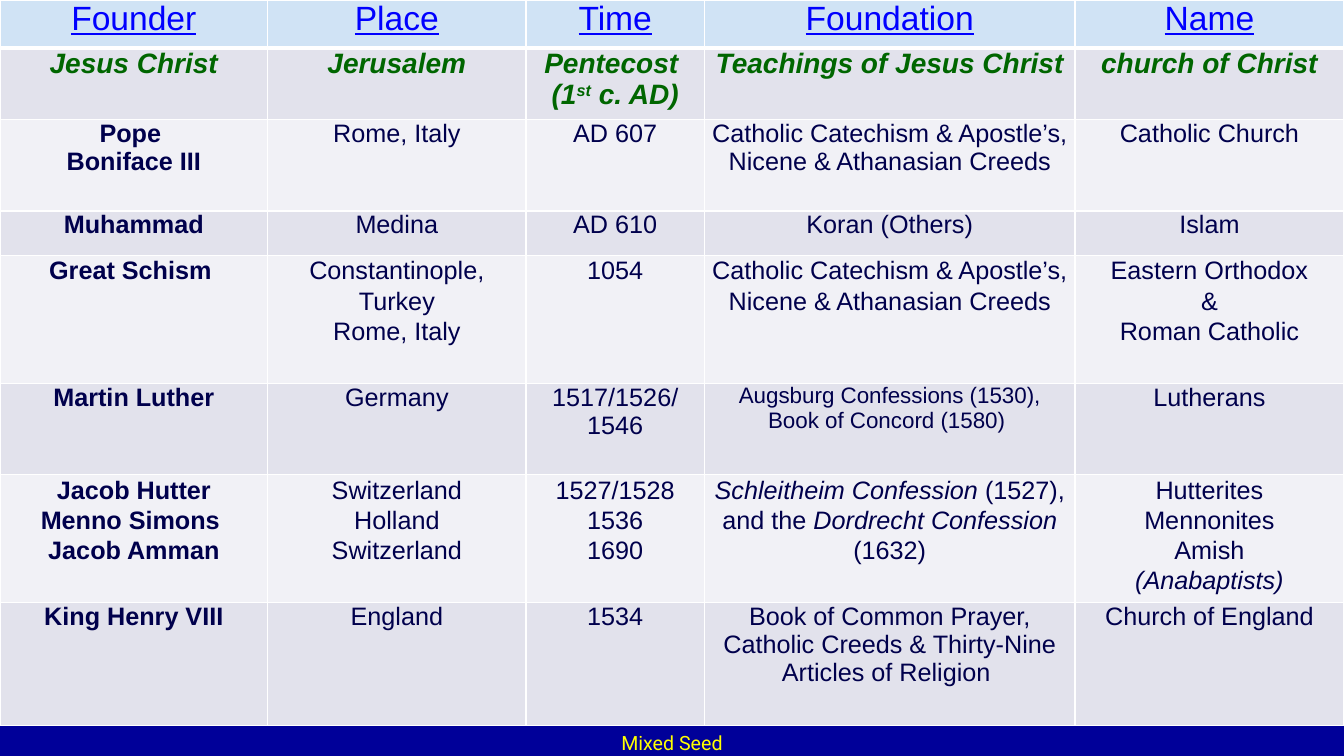
"""Build a slide with a table of church founders, places, dates, foundations and names."""
from lxml.etree import SubElement
from pptx import Presentation
from pptx.dml.color import RGBColor
from pptx.enum.text import MSO_ANCHOR as Anchor, PP_ALIGN as Align
from pptx.oxml.ns import qn
from pptx.util import Emu, Pt

PX = 9525
COLUMNS = [255, 246, 170, 353, 256]
HEIGHTS = [46, 68, 87, 42, 122, 87, 122, 117]
LOOSE_ROWS = [4, 6]
CREEDS = "Catholic Catechism & Apostle’s, Nicene & Athanasian Creeds"
ROWS = [
    ["Founder", "Place", "Time", "Foundation", "Name"],
    ["Jesus Christ", "Jerusalem", "Pentecost \n(1^st^ c. AD)",
     "Teachings of Jesus Christ", "church of Christ"],
    ["Pope \nBoniface III", "Rome, Italy", "AD 607", CREEDS, "Catholic Church"],
    ["Muhammad", "Medina", "AD 610", "Koran (Others)", "Islam"],
    ["Great Schism ", "Constantinople, Turkey\nRome, Italy", "1054", CREEDS,
     "Eastern Orthodox\n&\nRoman Catholic"],
    ["Martin Luther", "Germany", "1517/1526/\n1546",
     "Augsburg Confessions (1530), Book of Concord (1580) ", "Lutherans"],
    ["Jacob Hutter\nMenno Simons \nJacob Amman", "Switzerland\nHolland\nSwitzerland",
     "1527/1528\n1536\n1690",
     "*Schleitheim Confession* (1527), and the *Dordrecht Confession* (1632)",
     "Hutterites\nMennonites\nAmish\n*(Anabaptists)*"],
    ["King Henry VIII", "England", "1534",
     "Book of Common Prayer, Catholic Creeds & Thirty-Nine Articles of Religion ",
     "Church of England"],
]


def color(code):
    return RGBColor.from_string(code)


def add_span(para, text, size, code, face="Arial"):
    span = para.add_run()
    span.text = text
    span.font.name = face
    span.font.size = Pt(size)
    span.font.color.rgb = color(code)
    return span


deck = Presentation()
deck.slide_width, deck.slide_height = Emu(1280 * PX), Emu(720 * PX)
page = deck.slides.add_slide(deck.slide_layouts[6])
page.background.fill.solid()
page.background.fill.fore_color.rgb = color("000099")

table = page.shapes.add_table(len(ROWS), len(COLUMNS), 0, 0,
                              Emu(sum(COLUMNS) * PX), Emu(sum(HEIGHTS) * PX)).table
for column, width in zip(table.columns, COLUMNS):
    column.width = Emu(width * PX)

for row, (texts, height) in enumerate(zip(ROWS, HEIGHTS)):
    table.rows[row].height = Emu(height * PX)
    header, first = row == 0, row == 1
    loose = row in LOOSE_ROWS
    fill = "D0E3F5" if header else "E2E2EC" if row % 2 else "F1F1F6"
    ink = "0000FF" if header else "006600" if first else "00004C"
    for col, text in enumerate(texts):
        cell = table.cell(row, col)
        cell.margin_left = cell.margin_right = Emu((7 if loose else 6) * PX)
        cell.margin_top = cell.margin_bottom = 0
        cell.vertical_anchor = Anchor.TOP
        properties = cell._tc.get_or_add_tcPr()
        for side in "LRTB":
            weight = 3 if header and side == "B" else 1
            line = SubElement(properties, qn(f"a:ln{side}"), w=str(Pt(weight)))
            SubElement(SubElement(line, qn("a:solidFill")), qn("a:srgbClr"), val="FFFFFF")
        cell.fill.solid()
        cell.fill.fore_color.rgb = color(fill)
        size = 24 if header else 20 if first else 16 if (row, col) == (5, 3) else 18
        frame = cell.text_frame
        for index, sentence in enumerate(text.split("\n")):
            para = frame.add_paragraph() if index else frame.paragraphs[0]
            para.alignment = Align.CENTER
            if loose:
                para.line_spacing = 1.07
            for slant, chunk in enumerate(sentence.split("*")):
                for lift, piece in enumerate(chunk.split("^")):
                    if not piece:
                        continue
                    span = add_span(para, piece, size, ink)
                    span.font.underline = header
                    span.font.bold = first or (col == 0 and not header)
                    span.font.italic = first or slant % 2 == 1
                    if lift % 2:
                        span.font._element.set("baseline", "30000")

box = page.shapes.add_textbox(Emu(488 * PX), Emu(691 * PX), Emu(304 * PX), Emu(29 * PX))
box.text_frame.word_wrap = True
caption = box.text_frame.paragraphs[0]
caption.alignment = Align.CENTER
add_span(caption, "Mixed Seed", 14, "FFFF00", "Roboto")

deck.save("out.pptx")
